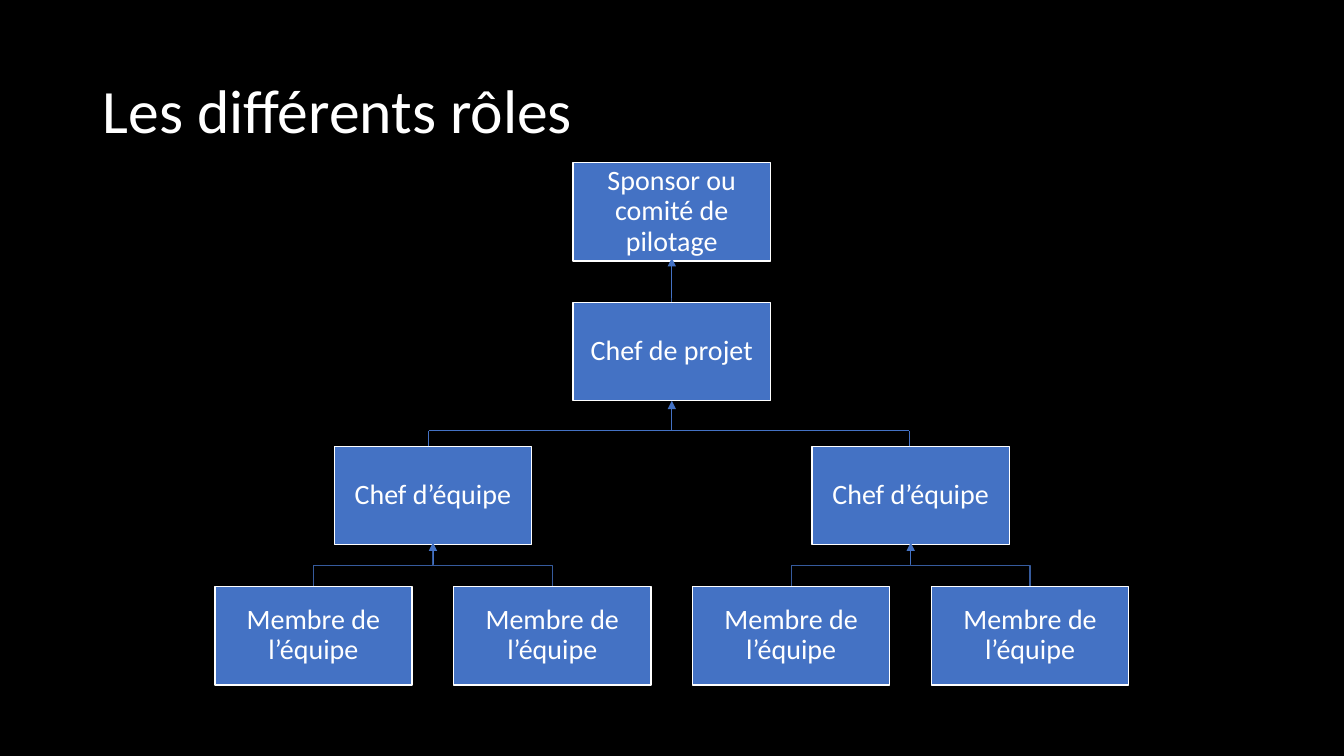
from lxml import etree
from pptx import Presentation
from pptx.dml.color import RGBColor
from pptx.enum.shapes import MSO_CONNECTOR, MSO_SHAPE
from pptx.enum.text import MSO_ANCHOR, MSO_AUTO_SIZE, PP_ALIGN
from pptx.oxml.ns import qn
from pptx.util import Cm, Pt

RECTANGLE = MSO_SHAPE.RECTANGLE
STRAIGHT = MSO_CONNECTOR.STRAIGHT
MIDDLE = MSO_ANCHOR.MIDDLE
NO_AUTOFIT = MSO_AUTO_SIZE.NONE
LEFT, CENTER = PP_ALIGN.LEFT, PP_ALIGN.CENTER

BLACK = RGBColor(0x00, 0x00, 0x00)
WHITE = RGBColor(0xFF, 0xFF, 0xFF)
BLUE = RGBColor(0x44, 0x72, 0xC4)
DARK_BLUE = RGBColor(0x36, 0x5B, 0x9D)

# Organisation chart, in centimetres
CENTER_X = 16.93
PITCH = 6.02
BOX_WIDTH, BOX_HEIGHT = 4.97, 2.48
SPONSOR_Y, PROJECT_Y, LEADER_Y, MEMBER_Y = 4.1, 7.62, 11.25, 14.78
LEADER_XS = [CENTER_X - PITCH, CENTER_X + PITCH]


class ChartSlide:
    font_name = "Calibri"

    def __init__(self, presentation):
        self.slide = presentation.slides.add_slide(presentation.slide_layouts[5])
        fill = self.slide.background.fill
        fill.solid()
        fill.fore_color.rgb = BLACK

    def set_text(self, shape, text, size, alignment):
        frame = shape.text_frame
        frame.text = text
        frame.word_wrap = True
        frame.auto_size = NO_AUTOFIT
        frame.vertical_anchor = MIDDLE
        paragraph = frame.paragraphs[0]
        paragraph.alignment = alignment
        paragraph.line_spacing = 0.9
        paragraph.font.name = self.font_name
        paragraph.font.size = Pt(size)
        paragraph.font.color.rgb = WHITE

    def title(self, text):
        title = self.slide.shapes.title
        title.left, title.top = Cm(2.33), Cm(1.02)
        title.width, title.height = Cm(29.21), Cm(3.68)
        self.set_text(title, text, 44, LEFT)

    def box(self, center_x, top, text):
        shape = self.slide.shapes.add_shape(
            RECTANGLE, Cm(center_x - BOX_WIDTH / 2), Cm(top), Cm(BOX_WIDTH), Cm(BOX_HEIGHT))
        shape.shadow.inherit = False
        shape.fill.solid()
        shape.fill.fore_color.rgb = BLUE
        shape.line.color.rgb = WHITE
        shape.line.width = Pt(1)
        frame = shape.text_frame
        frame.margin_left = frame.margin_right = Cm(0.03)
        frame.margin_top = frame.margin_bottom = Cm(0.03)
        self.set_text(shape, text, 20, CENTER)

    def elbow(self, start_x, start_y, end_x, end_y):
        """Draw a line that turns halfway down between two levels."""
        middle_y = (start_y + end_y) / 2
        builder = self.slide.shapes.build_freeform(Cm(start_x), Cm(start_y))
        corners = [(start_x, middle_y), (end_x, middle_y), (end_x, end_y)]
        builder.add_line_segments([(Cm(x), Cm(y)) for x, y in corners], close=False)
        shape = builder.convert_to_shape()
        shape.shadow.inherit = False
        shape.fill.background()
        shape.line.color.rgb = DARK_BLUE
        shape.line.width = Pt(1)

    def line(self, start, end, color=BLUE, width=0.5, arrow=False):
        connector = self.slide.shapes.add_connector(
            STRAIGHT, Cm(start[0]), Cm(start[1]), Cm(end[0]), Cm(end[1]))
        connector.line.color.rgb = color
        connector.line.width = Pt(width)
        properties = connector._element.spPr
        if arrow:
            outline = properties.find(qn("a:ln"))
            etree.SubElement(outline, qn("a:tailEnd"), type="triangle")
        etree.SubElement(properties, qn("a:effectLst"))


def main():
    presentation = Presentation()
    presentation.slide_width, presentation.slide_height = Cm(33.87), Cm(19.05)
    chart = ChartSlide(presentation)
    chart.title("Les différents rôles")

    # Teams
    for leader_x in LEADER_XS:
        member_xs = [leader_x - PITCH / 2, leader_x + PITCH / 2]
        for member_x in member_xs:
            chart.elbow(leader_x, LEADER_Y + BOX_HEIGHT, member_x, MEMBER_Y)
        chart.box(leader_x, LEADER_Y, "Chef d’équipe")
        for member_x in member_xs:
            chart.box(member_x, MEMBER_Y, "Membre de l’équipe")

    # Project management
    chart.line((CENTER_X, SPONSOR_Y + BOX_HEIGHT), (CENTER_X, PROJECT_Y), DARK_BLUE, 1)
    chart.box(CENTER_X, SPONSOR_Y, "Sponsor ou comité de pilotage")
    chart.box(CENTER_X, PROJECT_Y, "Chef de projet")

    # Reporting lines from the team leaders to the project manager
    bar_y = 10.85
    bar_xs = [10.8, 22.91]
    for x in bar_xs:
        chart.line((x, LEADER_Y), (x, bar_y))
    chart.line((bar_xs[0], bar_y), (bar_xs[1], bar_y))

    # Upward arrows
    chart.line((CENTER_X, bar_y), (CENTER_X, PROJECT_Y + BOX_HEIGHT), arrow=True)
    chart.line((CENTER_X, 7.52), (CENTER_X, 6.5), arrow=True)
    for leader_x in LEADER_XS:
        chart.line((leader_x, 14.22), (leader_x, 13.67), arrow=True)

    presentation.save("out.pptx")


if __name__ == "__main__":
    main()
